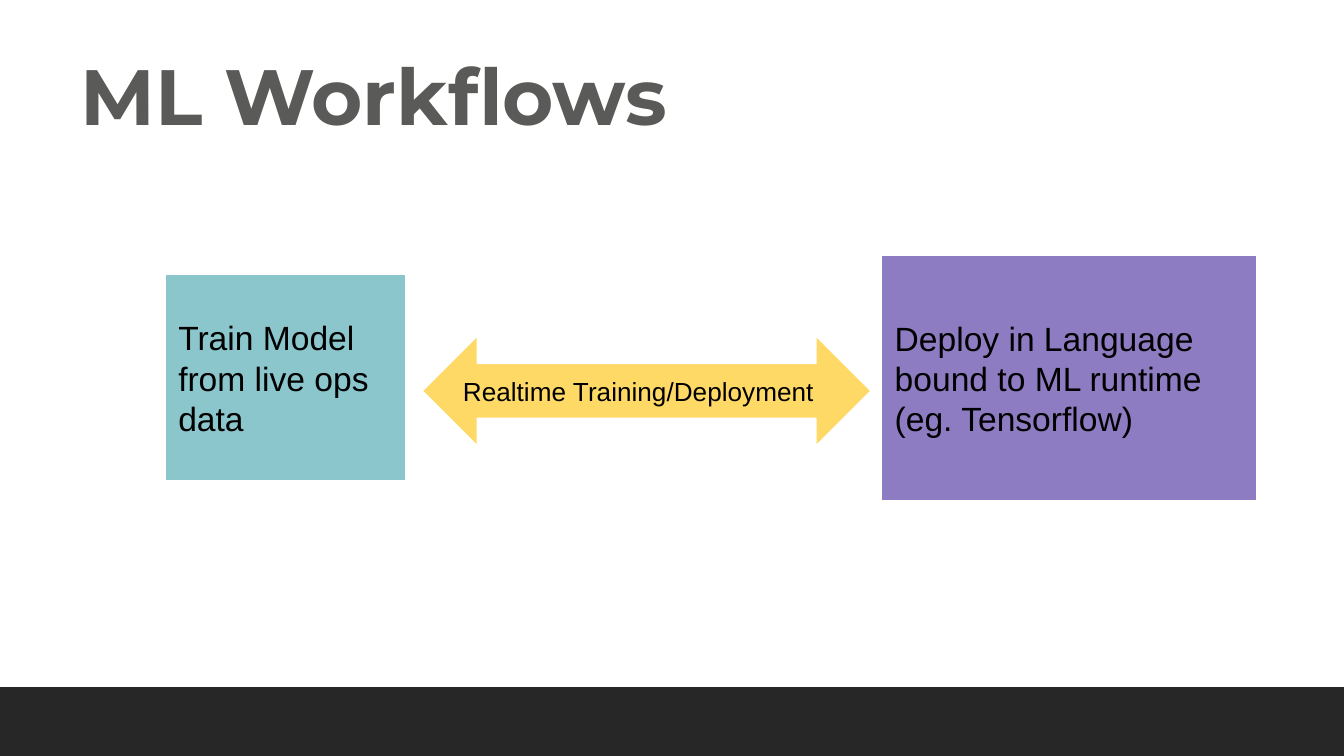
"""Build the ML Workflows slide: training and deployment joined by a two-way arrow."""
from dataclasses import dataclass

from pptx import Presentation
from pptx.dml.color import RGBColor
from pptx.enum.shapes import MSO_SHAPE
from pptx.enum.text import MSO_ANCHOR, PP_ALIGN
from pptx.util import Cm, Pt

RECTANGLE = MSO_SHAPE.RECTANGLE
TWO_WAY_ARROW = MSO_SHAPE.LEFT_RIGHT_ARROW
MIDDLE = MSO_ANCHOR.MIDDLE
LEFT = PP_ALIGN.LEFT


@dataclass(frozen=True)
class Theme:
    title_font: str = "Montserrat"
    body_font: str = "Arial"
    title_size: float = 42
    box_size: float = 18
    arrow_size: float = 14
    title_color: str = "5A5A59"
    text_color: str = "000000"
    outline: str = "FFFFFF"
    footer: str = "272727"
    train: str = "8AC6CC"
    deploy: str = "8E7CC3"
    arrow: str = "FFD966"


THEME = Theme()
SLIDE_WIDTH, SLIDE_HEIGHT = 25.4, 14.29
FOOTER_HEIGHT = 1.29
FLOW_LEFT = 3.12
INSET = 0.25
TITLE = "ML Workflows"
# text, preset, fill, type size, gap before, width, height, vertical centre
FLOW = [
    ("Train Model from live ops data", RECTANGLE, THEME.train,
     THEME.box_size, 0, 4.55, 3.91, 7.14),
    ("Realtime Training/Deployment", TWO_WAY_ARROW, THEME.arrow,
     THEME.arrow_size, 0.31, 8.48, 2.08, 7.39),
    ("Deploy in Language bound to ML runtime (eg. Tensorflow)", RECTANGLE, THEME.deploy,
     THEME.box_size, 0.2, 7.09, 4.65, 7.15),
]


def write_text(shape, text, font_name, size, color, bold=False):
    frame = shape.text_frame
    frame.word_wrap = True
    frame.vertical_anchor = MIDDLE
    frame.margin_left = frame.margin_right = Cm(INSET)
    frame.margin_top = frame.margin_bottom = Cm(INSET)
    paragraph = frame.paragraphs[0]
    paragraph.text = text
    paragraph.alignment = LEFT
    font = paragraph.font
    font.name, font.size, font.bold = font_name, Pt(size), bold
    font.color.rgb = RGBColor.from_string(color)


def add_block(slide, preset, bounds, fill, line, line_width):
    shape = slide.shapes.add_shape(preset, *map(Cm, bounds))
    shape.shadow.inherit = False
    shape.fill.solid()
    shape.fill.fore_color.rgb = RGBColor.from_string(fill)
    shape.line.color.rgb = RGBColor.from_string(line)
    shape.line.width = Pt(line_width)
    return shape


def main():
    presentation = Presentation()
    presentation.slide_width = Cm(SLIDE_WIDTH)
    presentation.slide_height = Cm(SLIDE_HEIGHT)
    slide = presentation.slides.add_slide(presentation.slide_layouts[6])

    footer_bounds = (0, SLIDE_HEIGHT - FOOTER_HEIGHT, SLIDE_WIDTH, FOOTER_HEIGHT)
    add_block(slide, RECTANGLE, footer_bounds, THEME.footer, THEME.footer, 0.9)

    title = slide.shapes.add_textbox(Cm(1.27), Cm(0.58), Cm(22.86), Cm(2.39))
    write_text(title, TITLE, THEME.title_font, THEME.title_size, THEME.title_color, bold=True)

    left = FLOW_LEFT
    for text, preset, fill, size, gap, width, height, centre in FLOW:
        left += gap
        bounds = (left, centre - height / 2, width, height)
        block = add_block(slide, preset, bounds, fill, THEME.outline, 0.75)
        write_text(block, text, THEME.body_font, size, THEME.text_color)
        left += width

    presentation.save("out.pptx")


if __name__ == "__main__":
    main()
